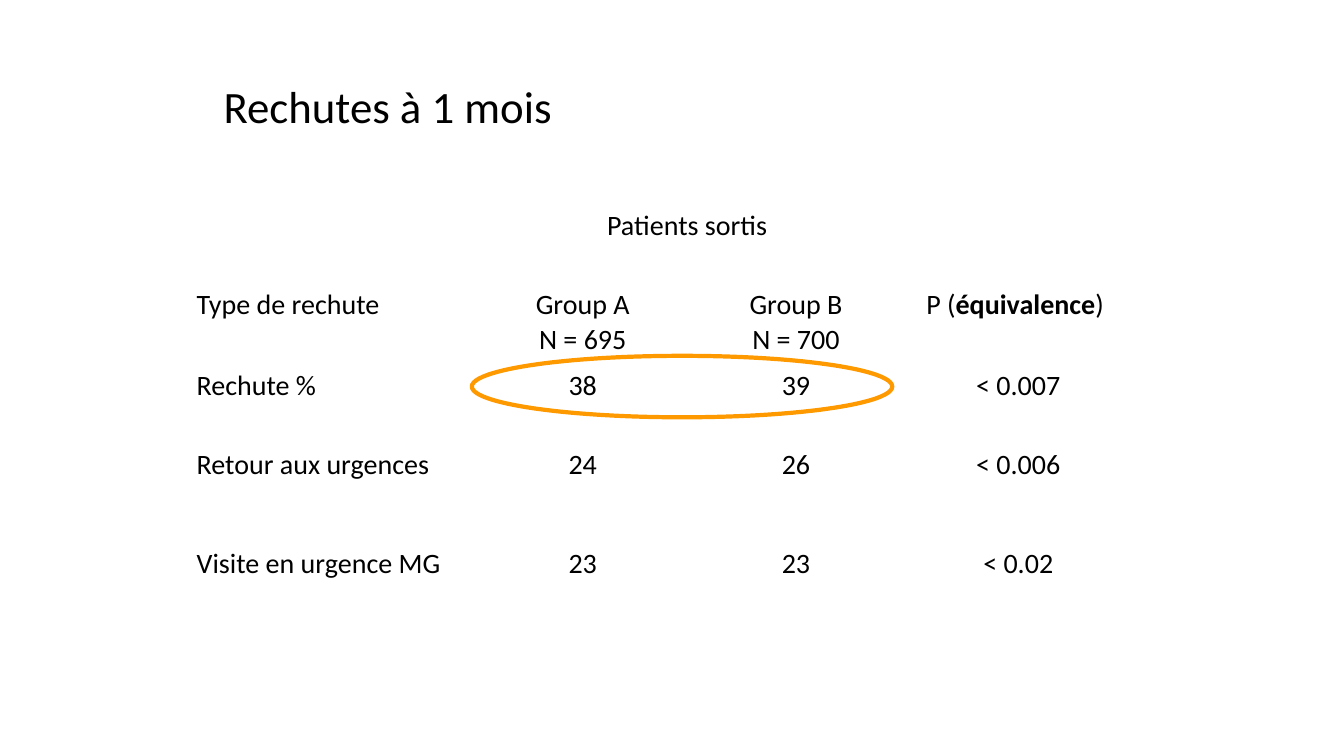
import pptx
import pptx.util
import pptx.dml.color
import pptx.enum.shapes
import pptx.enum.text
from pptx.util import Inches

# Content: a cell is a list of paragraphs, a paragraph a list of (text, bold) runs
TITLE = "Rechutes à 1 mois"


def plain(*lines):
    return [[(line, False)] for line in lines]


ROWS = [
    [[], plain("Patients sortis"), [], []],
    [plain("Type de rechute"), plain("Group A", "N = 695"), plain("Group B", "N = 700"),
     [[("P (", False), ("équivalence", True), (") ", False)]]],
    [plain("Rechute %"), plain("38"), plain("39"), plain("< 0.007")],
    [plain("Retour aux urgences"), plain("24"), plain("26"), plain("< 0.006")],
    [plain("Visite en urgence MG"), plain("23"), plain("23"), plain("< 0.02")],
]
COLUMN_WIDTHS = [2.85, 2.16, 2.07, 2.34]
ROW_HEIGHTS = [0.79, 0.8, 0.78, 0.98, 0.7]
TABLE_LEFT, TABLE_TOP = 1.85, 2.02

THEME = {
    "font": "Calibri",
    "title_size": pptx.util.Pt(32),
    "table_size": pptx.util.Pt(20),
    "ring_width": pptx.util.Pt(3),
    "text": pptx.dml.color.RGBColor.from_string("000000"),
    "ring": pptx.dml.color.RGBColor.from_string("FF9900"),
}


def style_font(paragraph, size):
    paragraph.font.name = THEME["font"]
    paragraph.font.size = size
    paragraph.font.color.rgb = THEME["text"]


def fill_cell(cell, paragraphs, centred):
    cell.fill.background()
    frame = cell.text_frame
    for index, runs in enumerate(paragraphs or [[]]):
        paragraph = frame.add_paragraph() if index else frame.paragraphs[0]
        style_font(paragraph, THEME["table_size"])
        if centred:
            paragraph.alignment = pptx.enum.text.PP_ALIGN.CENTER
        for text, bold in runs:
            run = paragraph.add_run()
            run.text = text
            if bold:
                run.font.bold = True


def add_title(slide):
    box = slide.shapes.add_textbox(Inches(2.12), Inches(0.46), Inches(8.5), Inches(1.25))
    frame = box.text_frame
    frame.word_wrap = True
    frame.vertical_anchor = pptx.enum.text.MSO_ANCHOR.MIDDLE
    paragraph = frame.paragraphs[0]
    paragraph.text = TITLE
    paragraph.line_spacing = 0.9
    style_font(paragraph, THEME["title_size"])


def add_results(slide):
    table = slide.shapes.add_table(
        len(ROWS), len(COLUMN_WIDTHS), Inches(TABLE_LEFT), Inches(TABLE_TOP),
        Inches(sum(COLUMN_WIDTHS)), Inches(sum(ROW_HEIGHTS))).table
    table.first_row = table.horz_banding = False
    for column, width in zip(table.columns, COLUMN_WIDTHS):
        column.width = Inches(width)
    for row, height in zip(table.rows, ROW_HEIGHTS):
        row.height = Inches(height)
    for row_index, row in enumerate(ROWS):
        for column_index, paragraphs in enumerate(row):
            fill_cell(table.cell(row_index, column_index), paragraphs, column_index > 0)
    # Group heading spans both groups
    table.cell(0, 1).merge(table.cell(0, 2))


def add_ring(slide):
    ring = slide.shapes.add_shape(pptx.enum.shapes.MSO_SHAPE.OVAL,
                                  Inches(4.68), Inches(3.53), Inches(4.17), Inches(0.61))
    ring.shadow.inherit = False
    ring.fill.background()
    ring.line.color.rgb = THEME["ring"]
    ring.line.width = THEME["ring_width"]


def main():
    presentation = pptx.Presentation()
    presentation.slide_width = Inches(13.33)
    presentation.slide_height = Inches(7.5)
    slide = presentation.slides.add_slide(presentation.slide_layouts[6])
    add_title(slide)
    add_results(slide)
    add_ring(slide)
    presentation.save("out.pptx")


if __name__ == "__main__":
    main()
